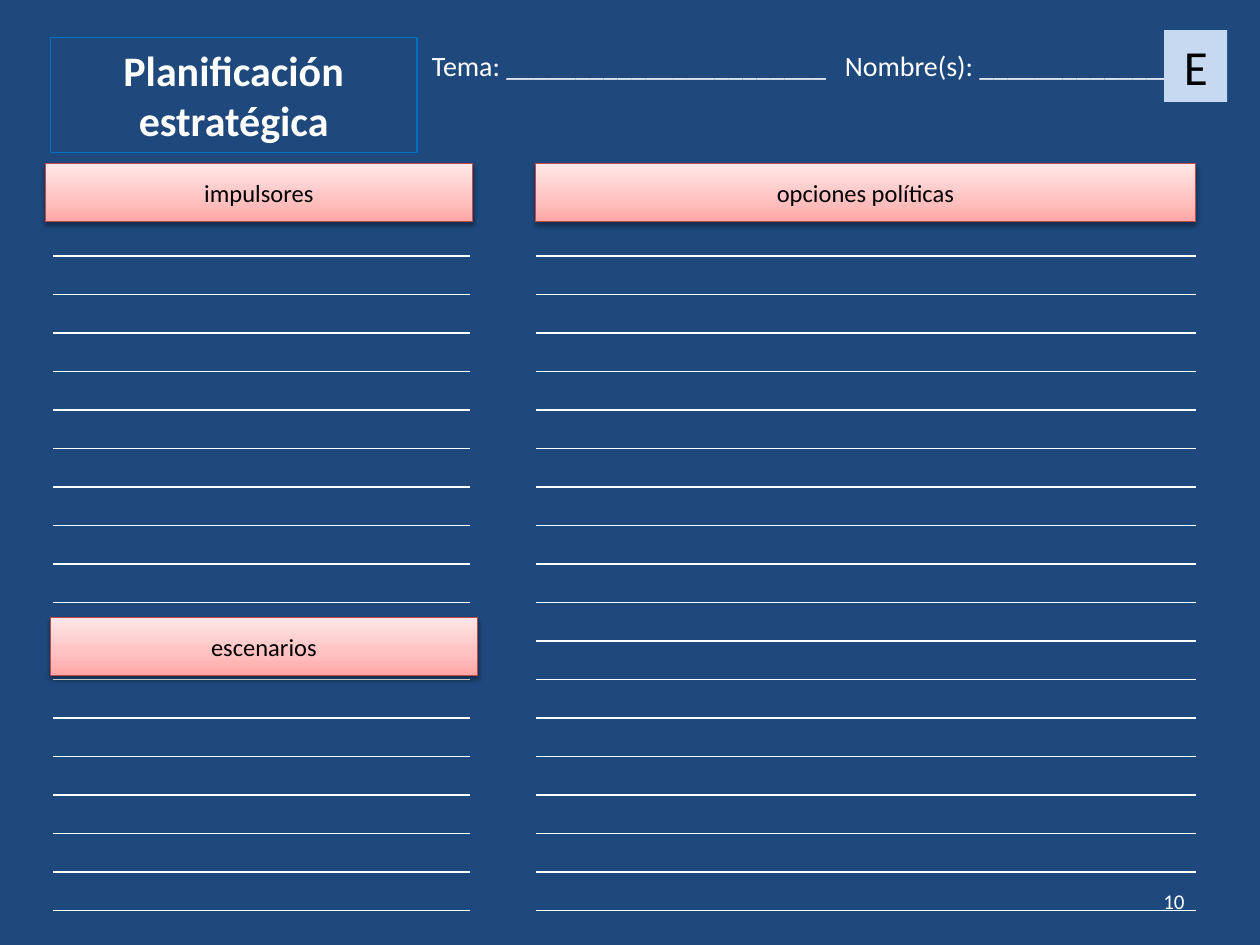
from copy import deepcopy
from lxml import etree
from pptx import Presentation
from pptx.dml.color import RGBColor
from pptx.enum import shapes, text
from pptx.oxml import parse_xml
from pptx.oxml.ns import qn
from pptx.util import Pt

NAVY = RGBColor(0x1F, 0x49, 0x7D)
WHITE = RGBColor(0xFF, 0xFF, 0xFF)
BLACK = RGBColor(0, 0, 0)
BLUE = RGBColor(0x00, 0x70, 0xC0)
PALE = RGBColor(0xC6, 0xD9, 0xF1)
RED = RGBColor(0xBF, 0x4C, 0x48)
PINKS = [(0, RGBColor(0xFF, 0xA6, 0xA5)), (0.35, RGBColor(0xFF, 0xC0, 0xBF)),
         (1, RGBColor(0xFF, 0xE7, 0xE7))]

TITLE = "Planificación estratégica"
FIELDS = "Tema: " + "_" * 23 + "\tNombre(s): " + "_" * 14
TAB = 236
BARS = [("escenarios", 28.8, 352.8, 244.08),
        ("impulsores", 25.92, 93.6, 244.08),
        ("opciones políticas", 306, 93.6, 377.28)]
BAR_H = 33.12
LISTS = [(30.24, 238.32), (306, 377.28)]
TOP, ROWS, ROW_H = 102.24, 19, 22
NS = 'xmlns:a="http://schemas.openxmlformats.org/drawingml/2006/main"'


def write(shape, words, size, color, align, anchor=text.MSO_ANCHOR.TOP, wrap=True):
    frame = shape.text_frame
    frame.text = words
    frame.word_wrap = wrap
    frame.vertical_anchor = anchor
    para = frame.paragraphs[0]
    para.alignment = align
    for run in para.runs:
        run.font.name = "Calibri"
        run.font.size = Pt(size)
        run.font.color.rgb = color
    return para


def add_box(slide, left, top, width, height):
    box = slide.shapes.add_shape(shapes.MSO_SHAPE.RECTANGLE,
                                 Pt(left), Pt(top), Pt(width), Pt(height))
    box.shadow.inherit = False
    return box


def add_lines(slide, left, width):
    table = slide.shapes.add_table(ROWS, 1, Pt(left), Pt(TOP),
                                   Pt(width), Pt(ROWS * ROW_H)).table
    table.first_row = table.horz_banding = False
    for row in table.rows:
        row.height = Pt(ROW_H)
        cell = row.cells[0]
        cell.margin_top = cell.margin_bottom = 0
        cell.text_frame.paragraphs[0].font.size = Pt(12)
        props = cell._tc.get_or_add_tcPr()
        for side in "LRTB":
            paint = (f'<a:solidFill><a:srgbClr val="{WHITE}"/></a:solidFill>'
                     if side in "TB" else "<a:noFill/>")
            props.append(parse_xml(f'<a:ln{side} {NS} w="12700">{paint}</a:ln{side}>'))
        cell.fill.background()


def add_bar(slide, words, left, top, width):
    bar = add_box(slide, left, top, width, BAR_H)
    bar.fill.gradient()
    bar.fill.gradient_angle = 90
    first = bar._element.spPr.find(".//" + qn("a:gs"))
    first.addnext(deepcopy(first))
    for stop, (spot, color) in zip(bar.fill.gradient_stops, PINKS):
        stop.position = spot
        stop.color.rgb = color
    bar.line.color.rgb = RED
    bar.line.width = Pt(0.75)
    glow = bar._element.spPr.find(qn("a:effectLst"))
    shade = etree.SubElement(glow, qn("a:outerShdw"), blurRad=str(Pt(3.1)),
                             dist=str(Pt(1.6)), dir="5400000", rotWithShape="0")
    ink = etree.SubElement(shade, qn("a:srgbClr"), val=str(BLACK))
    etree.SubElement(ink, qn("a:alpha"), val="38000")
    write(bar, words, 14, BLACK, text.PP_ALIGN.CENTER, text.MSO_ANCHOR.MIDDLE)


def main():
    deck = Presentation()
    deck.slide_width, deck.slide_height = Pt(720), Pt(540)
    slide = deck.slides.add_slide(deck.slide_layouts[5])
    slide.background.fill.solid()
    slide.background.fill.fore_color.rgb = NAVY

    for left, width in LISTS:
        add_lines(slide, left, width)

    title = slide.shapes.title
    title.left, title.top, title.width, title.height = Pt(28.8), Pt(21.6), Pt(209.52), Pt(65.52)
    title.line.color.rgb = BLUE
    title.line.width = Pt(0.75)
    write(title, TITLE, 24, WHITE, text.PP_ALIGN.CENTER).runs[0].font.bold = True
    title.text_frame.auto_size = text.MSO_AUTO_SIZE.NONE

    fields = slide.shapes.add_textbox(Pt(239.76), Pt(24.48), Pt(448.56), Pt(26.64))
    para = write(fields, FIELDS, 16, WHITE, text.PP_ALIGN.LEFT, wrap=False)
    tabs = etree.SubElement(para._p.get_or_add_pPr(), qn("a:tabLst"))
    etree.SubElement(tabs, qn("a:tab"), pos=str(Pt(TAB)), algn="l")

    badge = add_box(slide, 665.28, 17.28, 36, 41.04)
    badge.fill.solid()
    badge.fill.fore_color.rgb = PALE
    badge.line.fill.background()
    write(badge, "E", 28, BLACK, text.PP_ALIGN.CENTER)

    page = slide.shapes.add_textbox(Pt(516.24), Pt(500.4), Pt(167.76), Pt(28.8))
    write(page, "10", 12, WHITE, text.PP_ALIGN.RIGHT, text.MSO_ANCHOR.MIDDLE)

    for bar in BARS:
        add_bar(slide, *bar)

    deck.save("out.pptx")


if __name__ == "__main__":
    main()
